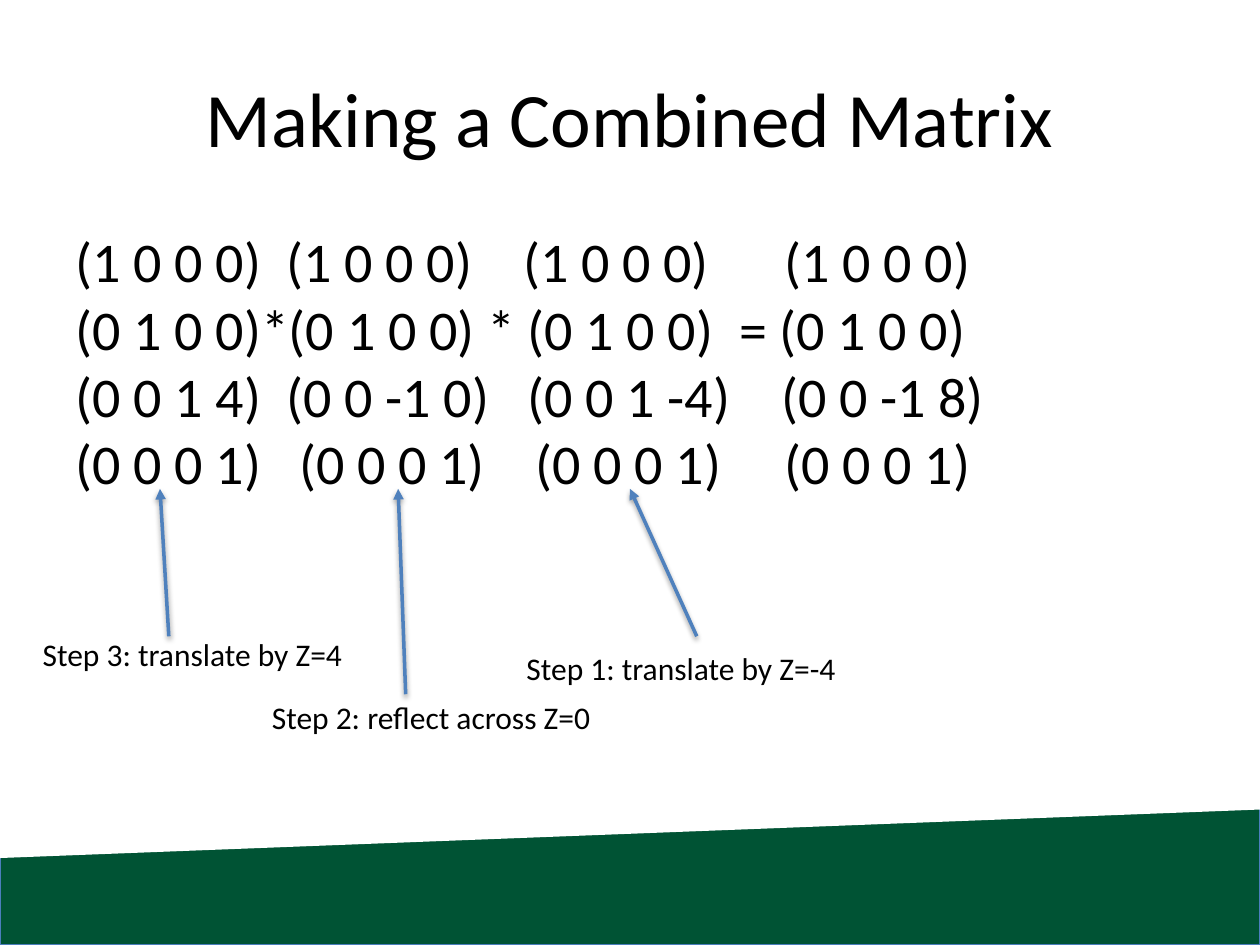
from lxml import etree
from pptx import Presentation
from pptx import util as u
from pptx.dml.color import RGBColor
from pptx.enum import shapes, text
from pptx.oxml.ns import qn

FONT = "Calibri"
BLACK, WHITE, GREEN, BLUE = "000000", "FFFFFF", "005334", "4F81BD"
SPACE = 7.23  # width of one space at 32 points

# Matrix rows: their parts, and the gaps between these in space widths
ROWS = [
    (("(1 0 0 0)", "(1 0 0 0)", "(1 0 0 0)", "(1 0 0 0)"), (2, 4, 6)),
    (("(0 1 0 0)*(0 1 0 0) * (0 1 0 0)", "= (0 1 0 0)"), (2,)),
    (("(0 0 1 4)", "(0 0 -1 0)", "(0 0 1 -4)", "(0 0 -1 8)"), (2, 3, 4)),
    (("(0 0 0 1)", "(0 0 0 1)", "(0 0 0 1)", "(0 0 0 1)"), (3, 4, 5)),
]

# Step label, its box, then the arrow's start and end
STEPS = [
    ("Step 1: translate by Z=-4", (4.08, 5.1, 2.68, 0.4), (5.53, 5.05), (5, 3.88)),
    ("Step 2: reflect across Z=0", (2.06, 5.49, 2.76, 0.4), (3.22, 5.51), (3.16, 3.88)),
    ("Step 3: translate by Z=4", (0.24, 4.99, 2.61, 0.4), (1.34, 5.05), (1.27, 3.88)),
]


def color(code):
    return RGBColor.from_string(code)


def inches(nums):
    return [u.Inches(n) for n in nums]


def place(item, box):
    item.left, item.top, item.width, item.height = inches(box)


def add_run(para, words, size):
    run = para.add_run()
    run.text = words
    run.font.name = FONT
    run.font.size = u.Pt(size)
    run.font.color.rgb = color(BLACK)
    return run


def add_band(slide, kind, box, fill, depth):
    """Add a filled shape behind the text."""
    band = slide.shapes.add_shape(kind, *inches(box))
    band.shadow.inherit = False
    band.fill.solid()
    band.fill.fore_color.rgb = color(fill)
    band.line.fill.background()
    slide.shapes._spTree.insert(2 + depth, band._element)
    return band


def add_footer(slide):
    base = add_band(slide, shapes.MSO_SHAPE.RECTANGLE, (0, 5.61, 10, 1.89), GREEN, 0)
    base.line.color.rgb = color("4B7EBC")
    base.line.width = u.Pt(0.75)
    # The white slant cuts the top edge of the green base
    slant = add_band(slide, shapes.MSO_SHAPE.PARALLELOGRAM, (3.84, 0.65, 2.32, 10), WHITE, 1)
    slant.adjustments[0] = 0.166
    slant.rotation = 90
    slant._element.spPr.find(qn("a:xfrm")).set("flipH", "1")


def add_title(slide, words):
    title = slide.shapes.title
    place(title, (0.5, 0.3, 9, 1.25))
    title.text_frame.vertical_anchor = text.MSO_ANCHOR.MIDDLE
    para = title.text_frame.paragraphs[0]
    para.alignment = text.PP_ALIGN.CENTER
    add_run(para, words, 44)


def clear_bullet(para):
    props = para._p.get_or_add_pPr()
    props.set("marL", "0")
    props.set("indent", "0")
    etree.SubElement(props, qn("a:buNone"))


def add_gap(para, count):
    """Add one space, widened by its character spacing."""
    gap = add_run(para, " ", 32)
    gap.font._element.set("spc", str(round((count - 1) * SPACE * 100)))


def add_rows(slide):
    body = slide.placeholders[1]
    place(body, (0.5, 1.75, 9, 4.95))
    frame = body.text_frame
    for i, (parts, gaps) in enumerate(ROWS):
        para = frame.add_paragraph() if i else frame.paragraphs[0]
        clear_bullet(para)
        para.space_before = u.Pt(0)
        add_run(para, parts[0], 32)
        for part, gap in zip(parts[1:], gaps):
            add_gap(para, gap)
            add_run(para, part, 32)


def add_label(slide, words, box):
    frame = slide.shapes.add_textbox(*inches(box)).text_frame
    frame.word_wrap = False
    frame.auto_size = text.MSO_AUTO_SIZE.SHAPE_TO_FIT_TEXT
    add_run(frame.paragraphs[0], words, 18)


def add_arrow(slide, start, end):
    arrow = slide.shapes.add_connector(shapes.MSO_CONNECTOR.STRAIGHT, *inches(start + end))
    arrow.line.color.rgb = color(BLUE)
    arrow.line.width = u.Pt(2)
    etree.SubElement(arrow.line._get_or_add_ln(), qn("a:tailEnd"), type="triangle")
    # Soft shadow straight below
    effects = etree.SubElement(arrow._element.spPr, qn("a:effectLst"))
    shade = etree.SubElement(
        effects, qn("a:outerShdw"), blurRad=str(u.Pt(3.1)), dist=str(u.Pt(1.6)),
        dir="5400000", rotWithShape="0")
    tint = etree.SubElement(shade, qn("a:srgbClr"), val=BLACK)
    etree.SubElement(tint, qn("a:alpha"), val="38000")


def main():
    deck = Presentation()
    deck.slide_width, deck.slide_height = inches((10, 7.5))
    slide = deck.slides.add_slide(deck.slide_layouts[1])
    add_footer(slide)
    add_title(slide, "Making a Combined Matrix")
    add_rows(slide)
    for words, box, start, end in STEPS:
        add_label(slide, words, box)
        add_arrow(slide, start, end)
    deck.save("out.pptx")


if __name__ == "__main__":
    main()
